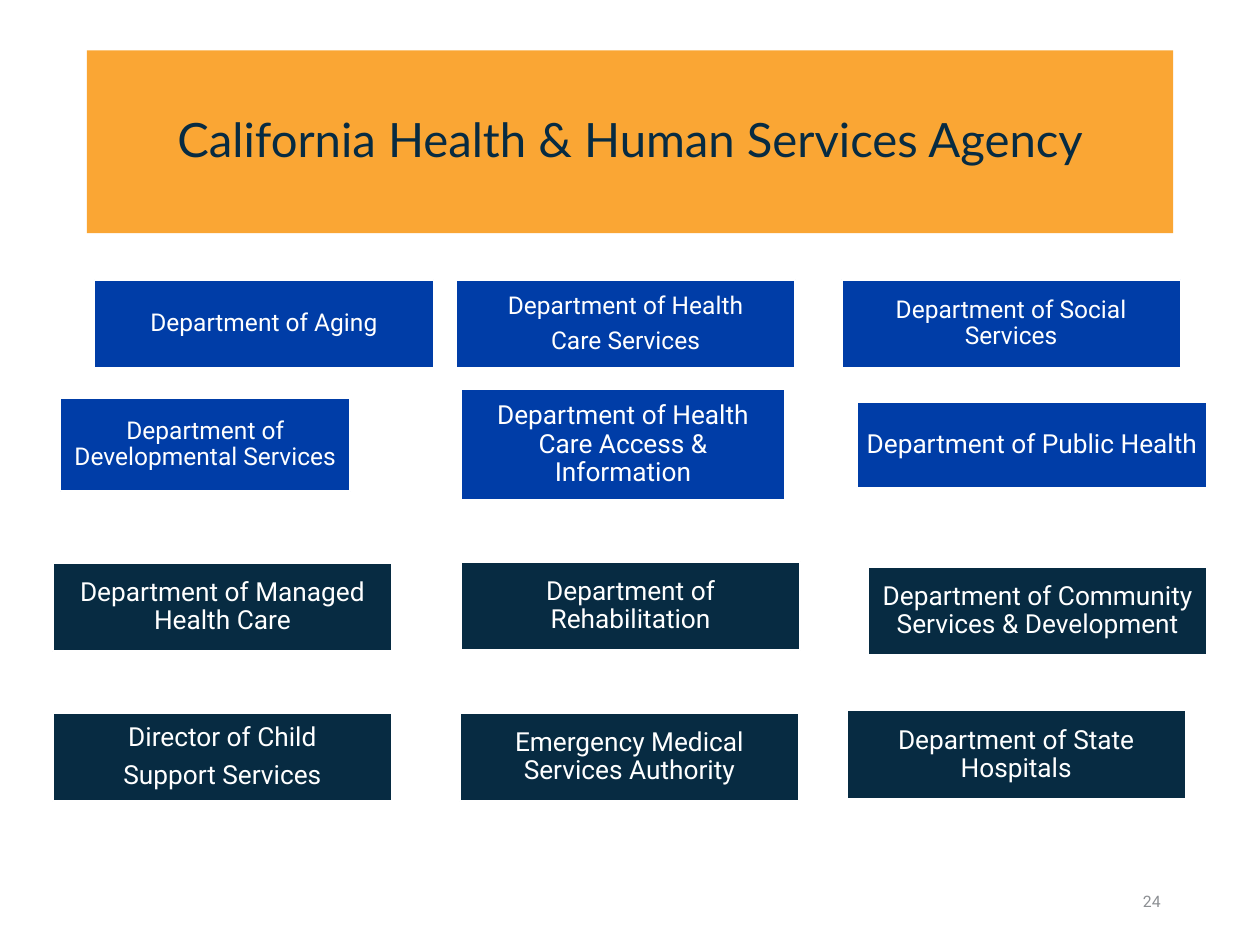
from pptx import Presentation
from pptx.dml.color import RGBColor
from pptx.enum.shapes import MSO_SHAPE
from pptx.enum.text import MSO_ANCHOR, PP_ALIGN
from pptx.util import Inches, Pt

COLORS = {"banner": "FAA634", "blue": "003DA7", "navy": "072B42",
          "white": "FFFFFF", "gray": "8C8F93"}
TITLE = "California Health & Human Services Agency"
PAGE_NUMBER = "24"
BOX_SIZE = (2.69, 0.7)
DEPARTMENTS = [
    ("blue", 14, "Department of Aging", (0.75, 2.22), BOX_SIZE),
    ("blue", 14, "Department of Health\nCare Services", (3.62, 2.22), BOX_SIZE),
    ("blue", 14, "Department of Social Services", (6.68, 2.22), BOX_SIZE),
    ("blue", 14, "Department of Developmental Services", (0.48, 3.16), (2.3, 0.74)),
    ("blue", 15, "Department of Health Care Access & Information", (3.66, 3.09), (2.57, 0.88)),
    ("blue", 15, "Department of Public Health", (6.8, 3.19), (2.78, 0.68)),
    ("navy", 15, "Department of Managed Health Care", (0.42, 4.47), BOX_SIZE),
    ("navy", 15, "Department of Rehabilitation", (3.66, 4.46), BOX_SIZE),
    ("navy", 15, "Department of Community Services & Development", (6.89, 4.5), BOX_SIZE),
    ("navy", 15, "Director of Child\nSupport Services", (0.42, 5.66), BOX_SIZE),
    ("navy", 15, "Emergency Medical Services Authority", (3.65, 5.66), BOX_SIZE),
    ("navy", 15, "Department of State Hospitals", (6.72, 5.64), BOX_SIZE),
]
MARGINS = ("margin_left", "margin_top", "margin_right", "margin_bottom")


def set_all(target, values):
    for name, value in values.items():
        setattr(target, name, value)


def place(part, left, top, width, height):
    set_all(part, {"left": Inches(left), "top": Inches(top),
                   "width": Inches(width), "height": Inches(height)})


def fill_with(part, color):
    part.fill.solid()
    part.fill.fore_color.rgb = RGBColor.from_string(COLORS[color])


def write(part, text, color, font, paragraph_format, frame_format=None):
    frame = part.text_frame
    frame.text = text
    set_all(frame, {"word_wrap": True, "vertical_anchor": MSO_ANCHOR.MIDDLE,
                    **(frame_format or {})})
    for paragraph in frame.paragraphs:
        set_all(paragraph, paragraph_format)
        for run in paragraph.runs:
            set_all(run.font, font)
            run.font.color.rgb = RGBColor.from_string(COLORS[color])


def add_department(slide, color, size, name, position, dimensions):
    box = slide.shapes.add_shape(
        MSO_SHAPE.RECTANGLE, *map(Inches, position + dimensions))
    box.shadow.inherit = False
    fill_with(box, color)
    fill_with(box.line, "white")
    box.line.width = Pt(1)
    write(box, name, "white", {"name": "Roboto", "size": Pt(size)},
          {"alignment": PP_ALIGN.CENTER, "line_spacing": 0.9,
           "space_after": Pt(round(size * 0.35, 1))},
          dict.fromkeys(MARGINS, Inches(0.06)))


def main():
    presentation = Presentation()
    set_all(presentation, {"slide_width": Inches(10), "slide_height": Inches(7.5)})
    slide = presentation.slides.add_slide(presentation.slide_layouts[5])

    banner = slide.shapes.title
    place(banner, 0.69, 0.4, 8.62, 1.45)
    fill_with(banner, "banner")
    write(banner, TITLE, "navy", {"name": "Lato", "size": Pt(27)},
          {"alignment": PP_ALIGN.CENTER, "line_spacing": 0.9})

    for department in DEPARTMENTS:
        add_department(slide, *department)

    page_number = slide.shapes.add_textbox(*map(Inches, (7.06, 6.95, 2.25, 0.4)))
    write(page_number, PAGE_NUMBER, "gray", {"name": "Roboto", "size": Pt(9)},
          {"alignment": PP_ALIGN.RIGHT})

    presentation.save("out.pptx")


if __name__ == "__main__":
    main()
